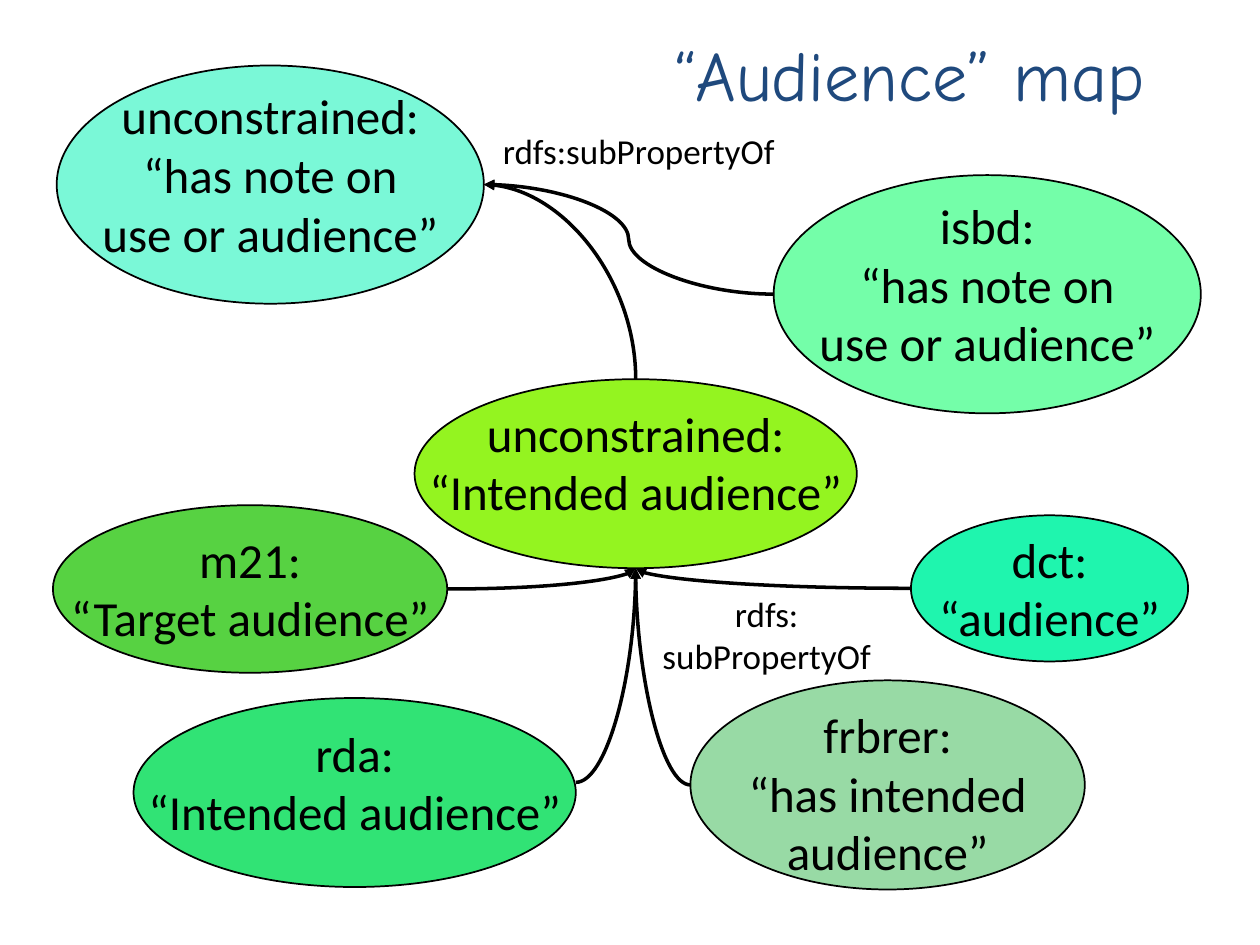
from collections import namedtuple

from lxml import etree
from pptx import Presentation
from pptx.dml.color import RGBColor
from pptx.enum.shapes import MSO_CONNECTOR, MSO_SHAPE
from pptx.enum.text import MSO_ANCHOR, MSO_AUTO_SIZE, PP_ALIGN
from pptx.oxml.ns import qn
from pptx.util import Inches, Pt

ELLIPSE = MSO_SHAPE.OVAL
CURVE = MSO_CONNECTOR.CURVE
CENTER, LEFT = PP_ALIGN.CENTER, PP_ALIGN.LEFT
TOP = MSO_ANCHOR.TOP
NO_FIT = MSO_AUTO_SIZE.NONE
COLUMNS, ROWS = 100, 75
TITLE_ONLY = 5

Node = namedtuple("Node", "left top width height")

# name: (place in columns and rows, fill, text inset, text height, lines)
PROPERTIES = {
    "m21": (Node(4.2, 40.1, 31.3, 13.3), "57D242", 1.4, 10.4,
            ["m21:", "“Target audience”"]),
    "frbrer": (Node(54.8, 54, 31.3, 16.6), "98DAA5", 1.4, 15.1,
               ["frbrer:", "“has intended", "audience”"]),
    "rda": (Node(10.6, 55.4, 35.1, 15), "31E375", 1.5, 10.4,
            ["rda:", "“Intended audience”"]),
    "dct": (Node(72.3, 40.9, 22, 11.6), "1FF5AE", 0.6, 10.4,
            ["dct:", "“audience”"]),
    "isbd": (Node(61.4, 13.9, 33.9, 18.9), "74FEA9", 1.1, 15.1,
             ["isbd:", "“has note on", "use or audience”"]),
    "intended": (Node(32.9, 30.1, 35.1, 15), "94F420", 1.4, 10.4,
                 ["unconstrained:", "“Intended audience”"]),
    "note": (Node(4.5, 5.2, 33.9, 18.9), "7AF8D7", 1.1, 15.1,
             ["unconstrained:", "“has note on", "use or audience”"]),
}


def color(hex_string):
    return RGBColor.from_string(hex_string)


def left_of(node):
    return node.left, node.top + node.height / 2


def right_of(node):
    return node.left + node.width, node.top + node.height / 2


def top_of(node):
    return node.left + node.width / 2, node.top


def bottom_of(node):
    return node.left + node.width / 2, node.top + node.height


class MapSlide:
    """Holds the style and the current slide."""

    font, title_font = "Calibri", "Comic Neue"
    ink, title_color = "000000", "1F497D"

    def __init__(self, presentation):
        self.column = presentation.slide_width / COLUMNS
        self.row = presentation.slide_height / ROWS
        layout = presentation.slide_layouts[TITLE_ONLY]
        self.slide = presentation.slides.add_slide(layout)

    def lengths(self, x, y):
        return round(x * self.column), round(y * self.row)

    def box(self, node):
        return (*self.lengths(node.left, node.top),
                *self.lengths(node.width, node.height))

    def set_text(self, shape, lines, size, font, ink, alignment):
        frame = shape.text_frame
        frame.text = "\n".join(lines)
        frame.word_wrap = False
        frame.auto_size = NO_FIT
        frame.vertical_anchor = TOP
        for paragraph in frame.paragraphs:
            paragraph.alignment = alignment
            for run in paragraph.runs:
                run.font.size = Pt(size)
                run.font.name = font
                run.font.color.rgb = color(ink)

    def title(self, node, text):
        shape = self.slide.shapes.title
        shape.left, shape.top, shape.width, shape.height = self.box(node)
        self.set_text(shape, [text], 40, self.title_font, self.title_color,
                      LEFT)

    def label(self, node, lines, size=20, shapes=None):
        if shapes is None:
            shapes = self.slide.shapes
        self.set_text(shapes.add_textbox(*self.box(node)), lines, size,
                      self.font, self.ink, CENTER)

    def property_node(self, node, fill, inset, text_height, lines):
        """Group an ellipse with its text."""
        group = self.slide.shapes.add_group_shape()
        ellipse = group.shapes.add_shape(ELLIPSE, *self.box(node))
        ellipse.shadow.inherit = False
        ellipse.fill.solid()
        ellipse.fill.fore_color.rgb = color(fill)
        ellipse.line.color.rgb = color(self.ink)
        ellipse.line.width = Pt(1)
        text_node = node._replace(top=node.top + inset, height=text_height)
        self.label(text_node, lines, 28, group.shapes)

    def curve(self, begin, end, preset="curvedConnector2", arrow="a:tailEnd"):
        """Draw a curve that leaves its beginning horizontally."""
        connector = self.slide.shapes.add_connector(
            CURVE, *self.lengths(*begin), *self.lengths(*end))
        connector.line.color.rgb = color(self.ink)
        connector.line.width = Pt(2)
        properties = connector._element.spPr
        properties.find(qn("a:prstGeom")).set("prst", preset)
        line = properties.find(qn("a:ln"))
        etree.SubElement(line, qn(arrow), type="triangle")
        etree.SubElement(properties, qn("a:effectLst"))


def main():
    presentation = Presentation()
    presentation.slide_width = Inches(10)
    presentation.slide_height = Inches(7.5)
    audience_map = MapSlide(presentation)

    for details in PROPERTIES.values():
        audience_map.property_node(*details)
    nodes = {name: details[0] for name, details in PROPERTIES.items()}

    rda, _, inset, text_height, _ = PROPERTIES["rda"]
    rda_text = rda._replace(top=rda.top + inset, height=text_height)
    for begin in (right_of(rda_text), left_of(nodes["frbrer"]),
                  right_of(nodes["m21"]), left_of(nodes["dct"])):
        audience_map.curve(begin, bottom_of(nodes["intended"]))
    audience_map.curve(right_of(nodes["note"]), top_of(nodes["intended"]),
                       arrow="a:headEnd")
    audience_map.curve(left_of(nodes["isbd"]), right_of(nodes["note"]),
                       preset="curvedConnector3")

    audience_map.label(Node(51.5, 46.5, 18.7, 7.7), ["rdfs:", "subPropertyOf"])
    audience_map.label(Node(38.8, 9.8, 23.8, 4.4), ["rdfs:subPropertyOf"])
    audience_map.title(Node(52.5, 2, 42.4, 7.7), "“Audience” map")
    presentation.save("out.pptx")


if __name__ == "__main__":
    main()
